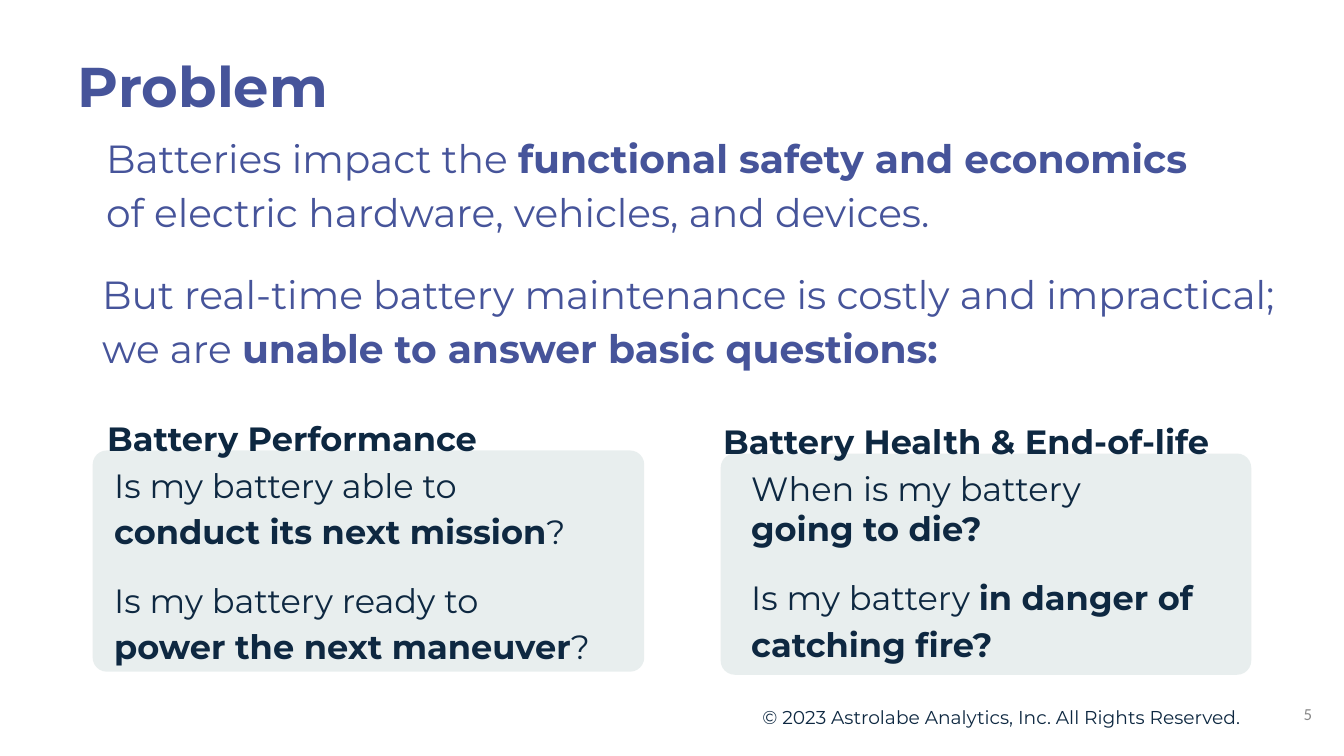
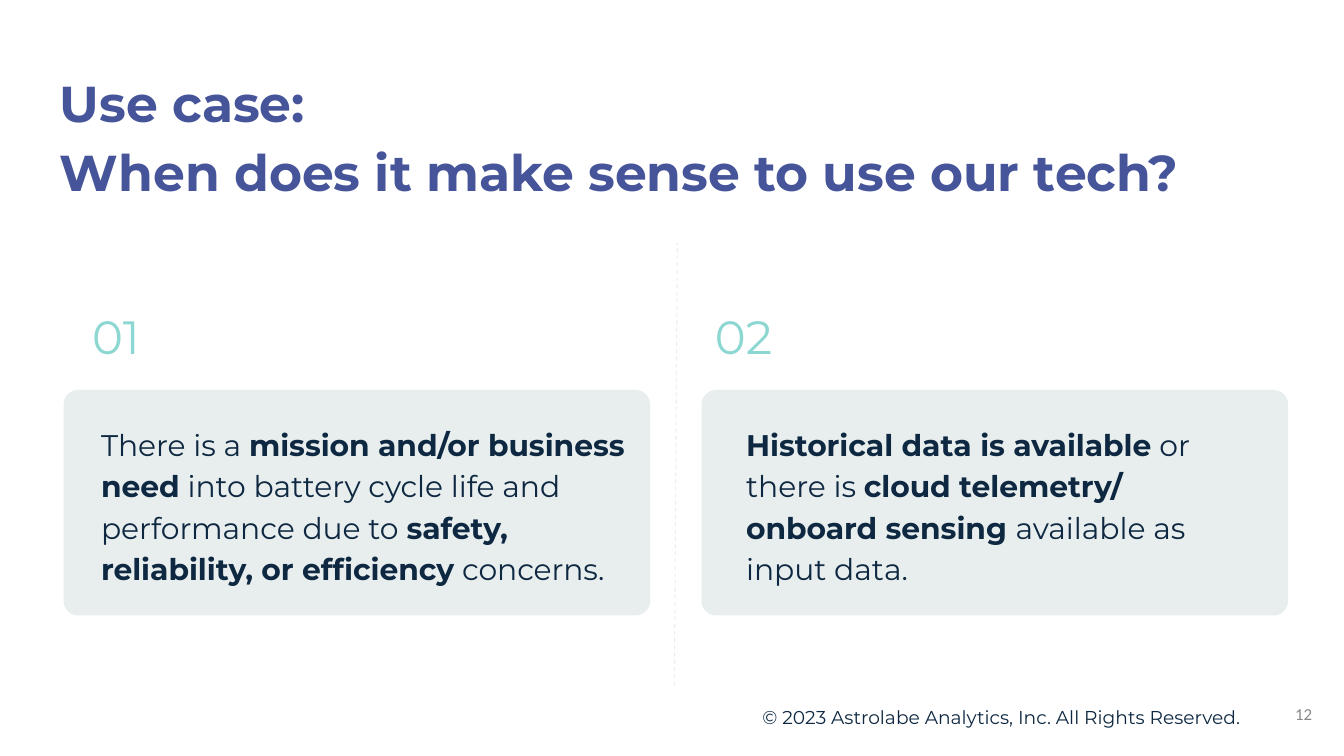
from dataclasses import dataclass

from lxml.etree import SubElement
from pptx import Presentation
from pptx.dml.color import RGBColor
from pptx.enum.dml import MSO_LINE
from pptx.enum.shapes import MSO_CONNECTOR, MSO_SHAPE
from pptx.enum.text import MSO_ANCHOR, PP_ALIGN
from pptx.oxml.ns import qn
from pptx.slide import Slide
from pptx.util import Pt

HUES = {
    "title": "46549A",
    "ink": "0E2841",
    "mint": "8CD7D2",
    "panel": "D8E2E2",
    "rule": "EEEEEE",
    "page": "888888",
}
INSET = 9.6
ALPHA = 57


@dataclass(frozen=True)
class Style:
    size: float
    hue: str = "ink"
    bold: bool = False
    face: str = "Montserrat"
    lead: float = 1.15
    align: PP_ALIGN = PP_ALIGN.LEFT
    anchor: MSO_ANCHOR = MSO_ANCHOR.TOP


@dataclass(frozen=True)
class Line:
    text: str
    lead: float | None = None
    gap: float = 0


@dataclass(frozen=True)
class Box:
    left: float
    top: float
    width: float
    height: float
    style: Style
    lines: tuple[Line, ...]


@dataclass(frozen=True)
class Panel:
    left: float
    top: float
    width: float
    height: float


@dataclass(frozen=True)
class Page:
    number: int
    panels: tuple[Panel, ...]
    boxes: tuple[Box, ...]
    split: bool = False


TITLE = Style(40, "title", bold=True)
LONG = Style(36, "title", bold=True)
LEDE = Style(28, "title")
HEAD = Style(24, bold=True)
ASK = Style(24)
CASE = Style(21.3)
COUNT = Style(33.3, "mint", lead=1)
FOOT = Style(13.3)
FOLIO = Style(12, "page", face="Calibri", lead=1,
              align=PP_ALIGN.RIGHT, anchor=MSO_ANCHOR.MIDDLE)

PAGES = (
    Page(
        5,
        (Panel(66.2, 321.8, 394, 158), Panel(514.8, 324, 379, 158)),
        (
            Box(46, 20.2, 869, 75, TITLE, (Line("Problem"),)),
            Box(66.2, 81.4, 881, 97, LEDE, (
                Line("Batteries impact the *functional safety and economics*"),
                Line("of electric hardware, vehicles, and devices."),
            )),
            Box(63.4, 178.6, 858, 97, LEDE, (
                Line("But real-time battery maintenance is costly and impractical; "
                     "we are *unable to answer basic questions:*"),
            )),
            Box(67, 284.4, 363, 69, HEAD, (Line("Battery Performance"),)),
            Box(507, 286.6, 369, 69, HEAD, (Line("Battery Health & End-of-life"),)),
            Box(72, 318.2, 363, 186, ASK, (
                Line("Is my battery able to *conduct its next mission*?"),
                Line("Is my battery ready to *power the next maneuver*?", gap=16),
            )),
            Box(527, 324.7, 394, 176, ASK, (
                Line("When is my battery", lead=1),
                Line("*going to die?*", lead=1),
                Line("Is my battery *in danger of catching fire?*", gap=16),
            )),
        ),
    ),
    Page(
        12,
        (Panel(45.4, 278.6, 419, 161), Panel(501.1, 278.6, 419, 161)),
        (
            Box(33.1, 35.3, 881, 119.5, LONG, (
                Line("Use case:"),
                Line("When does it make sense to use our tech?"),
            )),
            Box(56.2, 210.2, 83.5, 60, COUNT, (Line("01"),)),
            Box(501.1, 210.2, 83.5, 60, COUNT, (Line("02"),)),
            Box(62.6, 291.6, 396, 184, CASE, (
                Line("There is a *mission and/or business need* into battery cycle life "
                     "and performance due to *safety, reliability, or efficiency* concerns."),
            )),
            Box(523.4, 291.6, 381.6, 154, CASE, (
                Line("*Historical data is available* or there is "
                     "*cloud telemetry/ onboard sensing *available as input data."),
            )),
        ),
        split=True,
    ),
)


def tint(hue: str) -> RGBColor:
    return RGBColor.from_string(HUES[hue])


def add_box(slide: Slide, box: Box) -> None:
    style = box.style
    frame = slide.shapes.add_textbox(
        Pt(box.left), Pt(box.top), Pt(box.width), Pt(box.height)).text_frame
    frame.word_wrap = True
    frame.vertical_anchor = style.anchor
    frame.margin_left = frame.margin_right = Pt(INSET)
    frame.margin_top = frame.margin_bottom = Pt(INSET)
    for rank, line in enumerate(box.lines):
        para = frame.add_paragraph() if rank else frame.paragraphs[0]
        para.alignment = style.align
        para.line_spacing = line.lead or style.lead
        if line.gap:
            para.space_before = Pt(line.gap)
        para.font.name = style.face
        para.font.size = Pt(style.size)
        para.font.color.rgb = tint(style.hue)
        para.font.bold = style.bold
        for turn, part in enumerate(line.text.split("*")):
            if part:
                run = para.add_run()
                run.text = part
                if turn % 2:
                    run.font.bold = True


def add_panel(slide: Slide, panel: Panel) -> None:
    shape = slide.shapes.add_shape(
        MSO_SHAPE.ROUNDED_RECTANGLE,
        Pt(panel.left), Pt(panel.top), Pt(panel.width), Pt(panel.height))
    shape.adjustments[0] = 0.064
    shape.shadow.inherit = False
    shape.line.fill.background()
    shape.fill.solid()
    shape.fill.fore_color.rgb = tint("panel")
    color = shape.fill._xPr.find(qn("a:solidFill"))[0]
    SubElement(color, qn("a:alpha"), val=str(ALPHA * 1000))


def add_split(slide: Slide) -> None:
    rule = slide.shapes.add_connector(
        MSO_CONNECTOR.STRAIGHT, Pt(481.7), Pt(489.6), Pt(483.8), Pt(173.5))
    rule.line.color.rgb = tint("rule")
    rule.line.width = Pt(0.75)
    rule.line.dash_style = MSO_LINE.DASH
    SubElement(rule._element.spPr, qn("a:effectLst"))


def add_foot(slide: Slide, number: int) -> None:
    note = "© 2023 Astrolabe Analytics, Inc. All Rights Reserved."
    add_box(slide, Box(535, 492.5, 379, 54 - 6.5, FOOT, (Line(note),)))
    add_box(slide, Box(889.2, 489.6, 57.6, 41, FOLIO, (Line(str(number)),)))


def main() -> None:
    deck = Presentation()
    deck.slide_width, deck.slide_height = Pt(960), Pt(540)
    for page in PAGES:
        slide = deck.slides.add_slide(deck.slide_layouts[6])
        for panel in page.panels:
            add_panel(slide, panel)
        if page.split:
            add_split(slide)
        for box in page.boxes:
            add_box(slide, box)
        add_foot(slide, page.number)
    deck.save("out.pptx")


if __name__ == "__main__":
    main()
